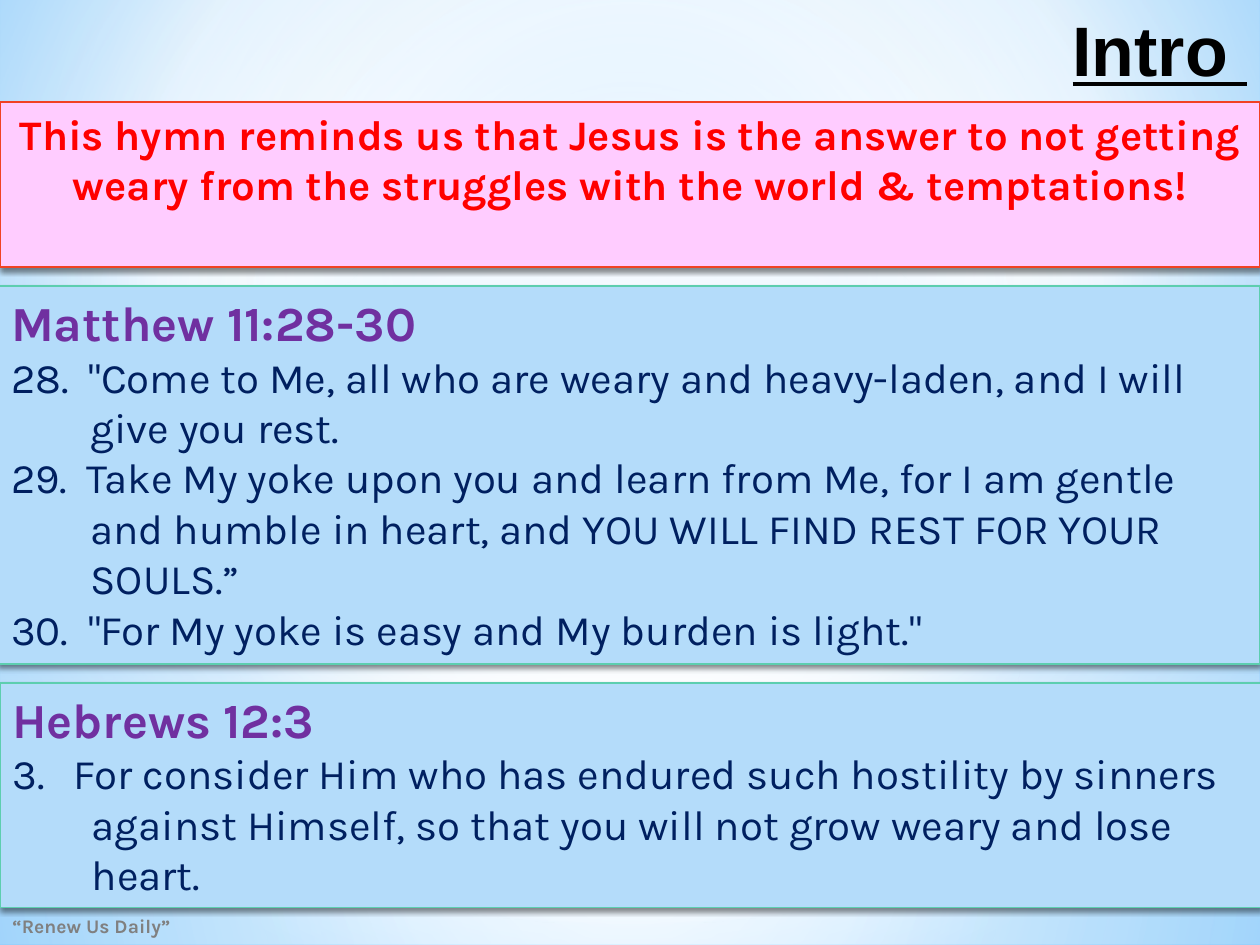
from lxml.etree import SubElement
from pptx import Presentation
from pptx.dml.color import RGBColor
from pptx.enum.shapes import MSO_SHAPE
from pptx.enum.text import MSO_ANCHOR, PP_ALIGN
from pptx.oxml.ns import qn
from pptx.util import Inches, Pt

FONT = "Karla"
PURPLE, NAVY, SKY, TEAL = "7030A0", "002060", "B4DCFA", "5DCEAF"


def rgb(color):
    return RGBColor.from_string(color)


def add_color(parent, color, opacity):
    clr = SubElement(parent, qn("a:srgbClr"), val=color)
    SubElement(clr, qn("a:alpha"), val=str(opacity * 1000))


def set_gradient(fill, props, stops, focus=None, angle=0):
    """Fill with (position, colour, opacity) stops, circular around focus or linear."""
    fill.solid()
    solid = props.find(qn("a:solidFill"))
    grad = solid.makeelement(qn("a:gradFill"), {"rotWithShape": "1"})
    props.replace(solid, grad)
    stop_list = SubElement(grad, qn("a:gsLst"))
    for pos, color, opacity in stops:
        gs = SubElement(stop_list, qn("a:gs"), pos=str(pos * 1000))
        add_color(gs, color, opacity)
    if focus:
        circle = SubElement(grad, qn("a:path"), path="circle")
        sides = {side: str(v * 1000) for side, v in zip("ltrb", focus)}
        SubElement(circle, qn("a:fillToRect"), sides)
    else:
        SubElement(grad, qn("a:lin"), ang=str(angle * 60000), scaled="0")


def add_glow(s, kind, box, stops, **direction):
    sp = s.shapes.add_shape(kind, *map(Inches, box))
    sp.shadow.inherit = False
    sp.line.fill.background()
    set_gradient(sp.fill, sp._element.spPr, stops, **direction)


def add_backdrop(s):
    fill = s.background.fill
    fill.solid()
    bg_props = s._element.cSld.find(qn("p:bg")).find(qn("p:bgPr"))
    set_gradient(fill, bg_props,
                 [(0, "9ED5FF", 100), (60, "FFFFFF", 100), (100, "5BB9FF", 100)],
                 focus=(20, 10, 20, 60))
    center = (50, 50, 50, 50)
    add_glow(s, MSO_SHAPE.RECTANGLE, (0, 5.58, 10, 1.92),
             [(0, "FFFFFF", 91), (37, "FFFFFF", 76), (100, SKY, 79)], focus=center)
    add_glow(s, MSO_SHAPE.RECTANGLE, (0, 0, 10, 5.58),
             [(0, "FFFFFF", 89), (48, "FFFFFF", 62), (100, SKY, 79)], focus=center)
    add_glow(s, MSO_SHAPE.RECTANGLE, (0, 4.12, 10, 2.5),
             [(0, "FFFFFF", 0), (29, "FFFFFF", 30), (45, SKY, 40),
              (55, "FFFFFF", 26), (65, SKY, 60), (100, "FFFFFF", 0)], angle=90)
    add_glow(s, MSO_SHAPE.OVAL, (0, 1.75, 10, 5.58),
             [(0, "FFFFFF", 100), (56, "FFFFFF", 0)], focus=center)


def format_paragraph(p, size, color, bold=False, align=PP_ALIGN.LEFT, font=FONT):
    p.alignment = align
    p.font.name, p.font.size, p.font.bold = font, Pt(size), bold
    p.font.color.rgb = rgb(color)


def set_hanging(p, indent):
    pPr = p._p.get_or_add_pPr()
    pPr.set("marL", str(Inches(indent)))
    pPr.set("indent", str(-Inches(indent)))


def add_title(s, text):
    title = s.shapes.title
    s.shapes._spTree.append(title._element)  # in front of the backdrop
    title.left, title.top, title.width, title.height = map(Inches, (0, 0, 10, 0.72))
    tf = title.text_frame
    tf.text = text
    tf.vertical_anchor = MSO_ANCHOR.TOP
    p = tf.paragraphs[0]
    format_paragraph(p, 40, "000000", True, PP_ALIGN.RIGHT, "Arial")
    p.font.underline = True


def add_footer(s, text):
    tf = s.shapes.add_textbox(*map(Inches, (0, 7.2, 3.67, 0.29))).text_frame
    tf.word_wrap = True
    tf.vertical_anchor = MSO_ANCHOR.MIDDLE
    tf.text = text
    format_paragraph(tf.paragraphs[0], 11, "808080", True)


def add_panel(s, box, fill, line):
    """Add a bordered panel with a soft shadow below and return its text frame."""
    sp = s.shapes.add_shape(MSO_SHAPE.RECTANGLE, *map(Inches, box))
    sp.fill.solid()
    sp.fill.fore_color.rgb = rgb(fill)
    sp.line.color.rgb = rgb(line)
    sp.line.width = Pt(0.75)
    sp.shadow.inherit = False
    effects = sp._element.spPr.find(qn("a:effectLst"))
    shadow = SubElement(effects, qn("a:outerShdw"), blurRad=str(Pt(3.1)),
                        dist=str(Pt(1.8)), dir=str(90 * 60000), rotWithShape="0")
    add_color(shadow, "000000", 45)
    tf = sp.text_frame
    tf.word_wrap = True
    tf.vertical_anchor = MSO_ANCHOR.TOP
    return tf


def add_message(s, box, text):
    tf = add_panel(s, box, "FFCCFF", "F14124")
    tf.text = text
    format_paragraph(tf.paragraphs[0], 24, "FF0000", True, PP_ALIGN.CENTER)


def add_passage(s, box, reference, verses, gap):
    """Add a reference and numbered verses, with gap extra points after each number."""
    tf = add_panel(s, box, SKY, TEAL)
    tf.text = reference
    heading = tf.paragraphs[0]
    format_paragraph(heading, 28, PURPLE, True)
    set_hanging(heading, 0.5)
    for number, verse in verses:
        p = tf.add_paragraph()
        for text in (f"{number}.", " ", verse):
            r = p.add_run()
            r.text = text
            if text == " ":
                r._r.get_or_add_rPr().set("spc", str(int(gap * 100)))
        format_paragraph(p, 24, NAVY)
        set_hanging(p, 0.63)


def main():
    prs = Presentation()
    prs.slide_width, prs.slide_height = Inches(10), Inches(7.5)
    s = prs.slides.add_slide(prs.slide_layouts[5])
    add_backdrop(s)
    add_footer(s, "“Renew Us Daily”")
    add_title(s, "Intro ")
    add_message(s, (0, 0.81, 10, 1.31),
                "This hymn reminds us that Jesus is the answer to not getting weary "
                "from the struggles with the world & temptations!")
    add_passage(s, (-0.01, 2.27, 10.01, 3), "Matthew 11:28-30", [
        (28, '"Come to Me, all who are weary and heavy-laden, and I will give you rest.'),
        (29, "Take My yoke upon you and learn from Me, for I am gentle and humble "
             "in heart, and YOU WILL FIND REST FOR YOUR SOULS.”"),
        (30, '"For My yoke is easy and My burden is light."'),
    ], gap=5.5)
    add_passage(s, (0, 5.42, 10.01, 1.78), "Hebrews 12:3", [
        (3, "For consider Him who has endured such hostility by sinners against "
            "Himself, so that you will not grow weary and lose heart."),
    ], gap=11)
    prs.save("out.pptx")


if __name__ == "__main__":
    main()
